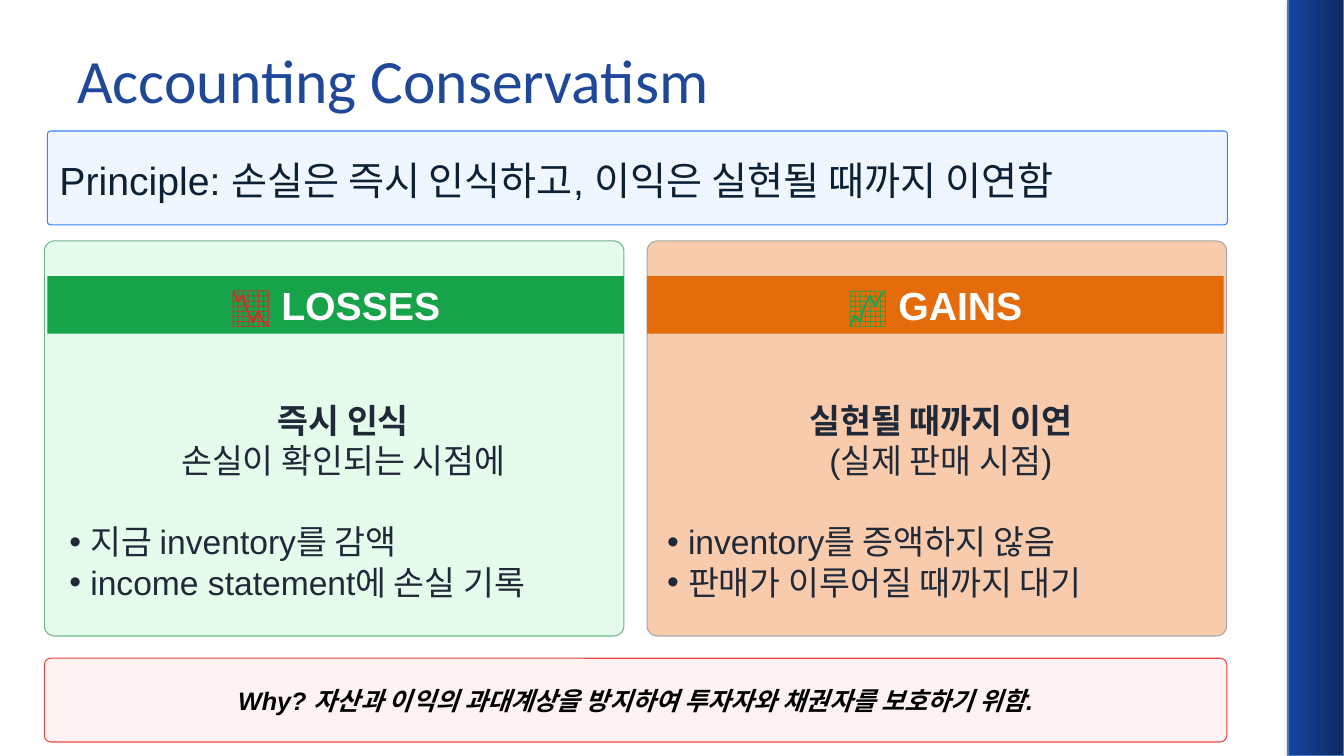
from lxml import etree
from pptx import Presentation
from pptx.dml.color import RGBColor
from pptx.enum.shapes import MSO_SHAPE
from pptx.enum.text import MSO_ANCHOR, PP_ALIGN
from pptx.oxml.ns import qn
from pptx.util import Pt

RECT, ROUNDED = MSO_SHAPE.RECTANGLE, MSO_SHAPE.ROUNDED_RECTANGLE
LEFT, CENTER = PP_ALIGN.LEFT, PP_ALIGN.CENTER
TOP, MIDDLE = MSO_ANCHOR.TOP, MSO_ANCHOR.MIDDLE

# Content
TITLE = "Accounting Conservatism"
PRINCIPLE = "Principle: 손실은 즉시 인식하고, 이익은 실현될 때까지 이연함"
WHY = "Why? 자산과 이익의 과대계상을 방지하여 투자자와 채권자를 보호하기 위함."
PANELS = [
    {"name": "LOSSES", "icon": "📉 ", "icon_color": "DC2626",
     "fill": "E5FCED", "line": "6DB587", "band": "16A34A",
     "left": 31.7, "band_left": 33.8, "body_left": 42.5,
     "rule": "즉시 인식", "timing": "손실이 확인되는 시점에",
     "actions": ["지금 inventory를 감액", "income statement에 손실 기록"]},
    {"name": "GAINS", "icon": "📈 ", "icon_color": "16A34A",
     "fill": "F8CBAD", "line": "A6A6A6", "band": "E46C0A",
     "left": 462.2, "band_left": 462.2, "body_left": 469.4,
     "rule": "실현될 때까지 이연", "timing": "(실제 판매 시점)",
     "actions": ["inventory를 증액하지 않음", "판매가 이루어질 때까지 대기"]},
]

# Theme: colours and type styles
THEME = {
    "bar_dark": "0D2960", "bar_light": "1645A2", "bar_line": "4B7EBC",
    "principle_fill": "EFF6FF", "principle_line": "3B82F6",
    "why_fill": "FEF2F2", "why_line": "EF4444",
    "title": {"name": "Calibri", "size": 44, "color": "1F4899"},
    "principle": {"name": "Arial", "size": 28, "color": "0E2134"},
    "band": {"name": "Arial", "size": 28, "color": "FFFFFF", "bold": True},
    "body": {"name": "Arial", "size": 24, "color": "1F2937"},
    "why": {"name": "Arial", "size": 18, "color": "000000",
            "bold": True, "italic": True},
}
BULLET_INDENT = 15
BODY_GAP = 29

deck = Presentation()
deck.slide_width, deck.slide_height = Pt(960), Pt(540)
page = deck.slides.add_slide(deck.slide_layouts[6])


def add_block(kind, place, fill, line=None, corner=None):
    block = page.shapes.add_shape(kind, *map(Pt, place))
    block.shadow.inherit = False
    if fill:
        block.fill.solid()
        block.fill.fore_color.rgb = RGBColor.from_string(fill)
    if line:
        block.line.color.rgb = RGBColor.from_string(line)
        block.line.width = Pt(0.75)
    else:
        block.line.fill.background()
    if corner:
        block.adjustments[0] = corner
    return block


def add_text_box(place, anchor=TOP):
    box = page.shapes.add_textbox(*map(Pt, place))
    box.text_frame.word_wrap = True
    box.text_frame.vertical_anchor = anchor
    return box.text_frame


def add_span(para, text, style):
    span = para.add_run()
    span.text = text
    for key, value in style.items():
        if key == "color":
            span.font.color.rgb = RGBColor.from_string(value)
        else:
            setattr(span.font, key, Pt(value) if key == "size" else value)


def write(para, text, style, align=LEFT):
    para.alignment = align
    add_span(para, text, style)


def add_bullet(para):
    props = para._p.get_or_add_pPr()
    props.set("marL", str(Pt(BULLET_INDENT)))
    props.set("indent", str(-Pt(BULLET_INDENT)))
    etree.SubElement(props, qn("a:buFont")).set("typeface", "Arial")
    etree.SubElement(props, qn("a:buChar")).set("char", "•")


# Side bar with gradient and soft shadow
bar = add_block(RECT, (920, 0, 40, 540), None, THEME["bar_line"])
bar.fill.gradient()
bar.fill.gradient_angle = 180
for stop, name in zip(bar.fill.gradient_stops, ("bar_dark", "bar_light")):
    stop.color.rgb = RGBColor.from_string(THEME[name])
effects = bar._element.spPr.find(qn("a:effectLst"))
shadow = etree.SubElement(effects, qn("a:outerShdw"), blurRad=str(Pt(3.1)),
                          dist=str(Pt(1.8)), dir="5400000", rotWithShape="0")
shade = etree.SubElement(shadow, qn("a:srgbClr"), val="000000")
etree.SubElement(shade, qn("a:alpha"), val="35000")

# Title
title = add_text_box((48.2, 11.5, 864, 90), MIDDLE)
write(title.paragraphs[0], TITLE, THEME["title"])

# Principle
add_block(ROUNDED, (33.8, 93.6, 843, 67), THEME["principle_fill"],
          THEME["principle_line"], 0.037)
principle = add_text_box((42.5, 110.2, 843, 35.3))
for side in ("left", "top", "right", "bottom"):
    setattr(principle, f"margin_{side}", Pt(1.4 if side == "top" else 0))
write(principle.paragraphs[0], PRINCIPLE, THEME["principle"])

# Loss and gain panels
for panel in PANELS:
    add_block(ROUNDED, (panel["left"], 172.1, 414, 282.2),
              panel["fill"], panel["line"], 0.026)
    band = add_block(RECT, (panel["band_left"], 197.3, 411.8, 41),
                     panel["band"])
    heading = band.text_frame.paragraphs[0]
    write(heading, panel["icon"],
          {**THEME["band"], "color": panel["icon_color"]}, CENTER)
    add_span(heading, panel["name"], THEME["band"])

    body = add_text_box((panel["body_left"], 282.2, 405.4, 152.6))
    write(body.paragraphs[0], panel["rule"],
          {**THEME["body"], "bold": True}, CENTER)
    write(body.add_paragraph(), panel["timing"], THEME["body"], CENTER)
    for index, action in enumerate(panel["actions"]):
        para = body.add_paragraph()
        if index == 0:
            para.space_before = Pt(BODY_GAP)
        add_bullet(para)
        write(para, action, THEME["body"])

# Reason
why = add_block(ROUNDED, (31.7, 470.2, 844.6, 59.8), THEME["why_fill"],
                THEME["why_line"], 0.078)
why.text_frame.vertical_anchor = MIDDLE
write(why.text_frame.paragraphs[0], WHY, THEME["why"], CENTER)

deck.save("out.pptx")
